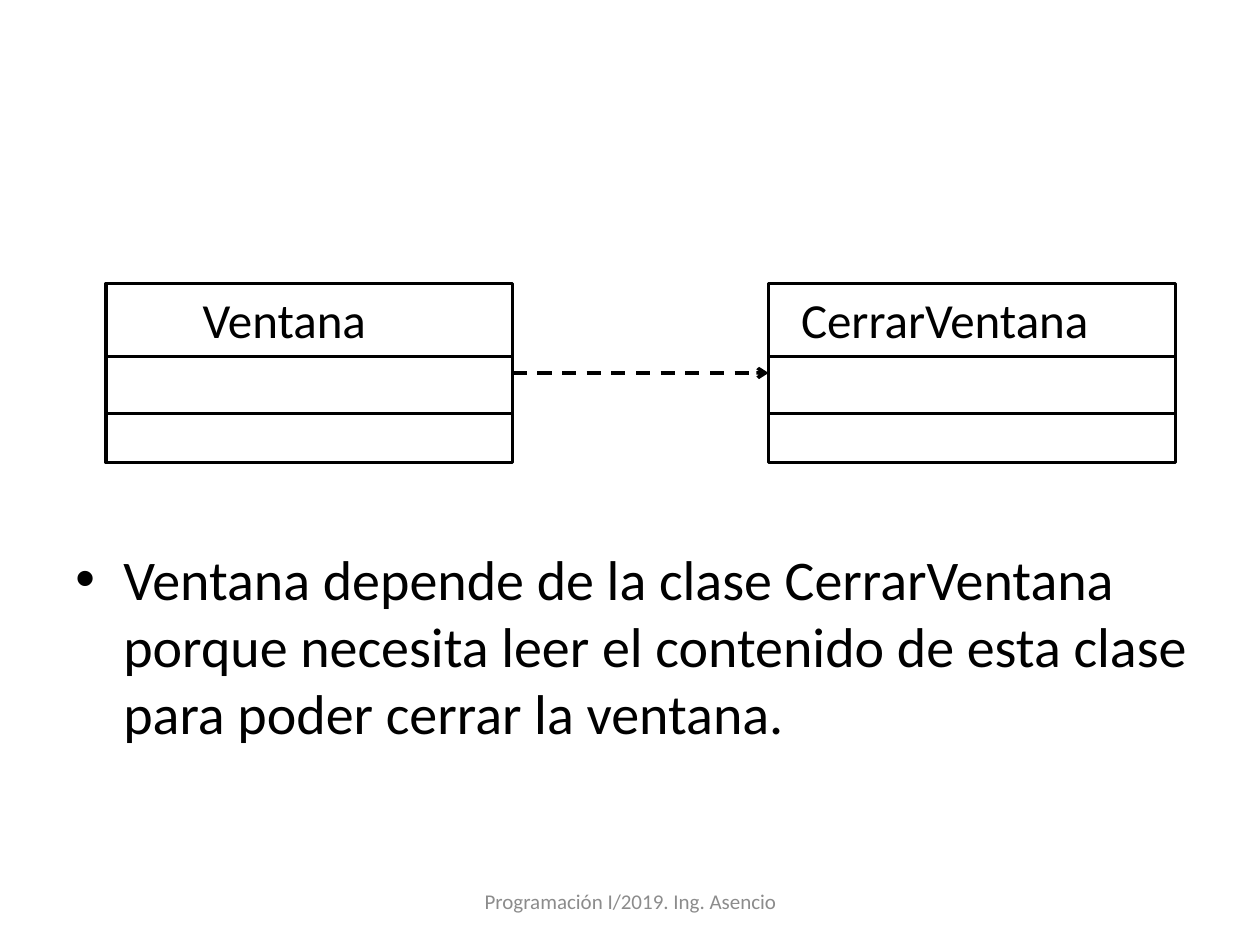
from dataclasses import dataclass

from lxml.etree import SubElement
from pptx import Presentation
from pptx.dml.color import RGBColor
from pptx.enum.dml import MSO_LINE
from pptx.enum.shapes import MSO_CONNECTOR, MSO_SHAPE
from pptx.enum.text import MSO_ANCHOR, PP_ALIGN
from pptx.oxml.ns import qn
from pptx.util import Inches, Pt


@dataclass(frozen=True)
class Theme:
    font: str = "Calibri"
    ink: RGBColor = RGBColor(0, 0, 0)
    muted: RGBColor = RGBColor(0x8C, 0x8C, 0x8C)
    body: int = 32
    class_name: int = 28
    footer: int = 12
    line: int = 2


@dataclass(frozen=True)
class ClassBox:
    name: str
    left: float
    name_left: float
    name_width: float


THEME = Theme()
BOX_TOP, BOX_WIDTH, BOX_HEIGHT = 2.25, 3.23, 1.42
DIVIDERS = (2.83, 3.28)
CLASSES = (
    ClassBox("Ventana", 0.84, 1.51, 1.89),
    ClassBox("CerrarVentana", 6.1, 6.26, 3.07),
)


def add_text(s, text: str, left: float, top: float, width: float, height: float,
             size: int, color: RGBColor = THEME.ink):
    sp = s.shapes.add_textbox(Inches(left), Inches(top), Inches(width), Inches(height))
    tf = sp.text_frame
    tf.word_wrap = True
    tf.text = text
    font = tf.paragraphs[0].runs[0].font
    font.name, font.size = THEME.font, Pt(size)
    font.color.rgb = color
    return tf


def add_line(s, x1: float, y1: float, x2: float, y2: float):
    cx = s.shapes.add_connector(MSO_CONNECTOR.STRAIGHT, Inches(x1), Inches(y1),
                                Inches(x2), Inches(y2))
    cx.line.color.rgb = THEME.ink
    cx.line.width = Pt(THEME.line)
    SubElement(cx._element.spPr, qn("a:effectLst"))
    return cx


def add_class(s, box: ClassBox):
    sp = s.shapes.add_shape(MSO_SHAPE.RECTANGLE, Inches(box.left), Inches(BOX_TOP),
                            Inches(BOX_WIDTH), Inches(BOX_HEIGHT))
    sp.shadow.inherit = False
    sp.fill.background()
    sp.line.color.rgb = THEME.ink
    sp.line.width = Pt(THEME.line)
    for y in DIVIDERS:
        add_line(s, box.left, y, box.left + BOX_WIDTH, y)
    add_text(s, box.name, box.name_left, BOX_TOP, box.name_width, 0.57, THEME.class_name)
    return sp


def add_dependency(s, source, target):
    y = BOX_TOP + BOX_HEIGHT / 2
    cx = add_line(s, CLASSES[0].left + BOX_WIDTH, y, CLASSES[1].left, y)
    cx.begin_connect(source, 3)
    cx.end_connect(target, 1)
    cx.line.dash_style = MSO_LINE.DASH
    SubElement(cx.line._get_or_add_ln(), qn("a:tailEnd"), type="arrow")


def add_bullet(p):
    pPr = p._p.get_or_add_pPr()
    pPr.set("marL", str(Inches(0.38)))
    pPr.set("indent", str(Inches(-0.38)))
    SubElement(pPr, qn("a:buFont"), typeface="Arial")
    SubElement(pPr, qn("a:buChar"), char="•")


def main():
    prs = Presentation()
    prs.slide_width, prs.slide_height = Inches(10), Inches(7.5)
    s = prs.slides.add_slide(prs.slide_layouts[6])

    # Class diagram
    window, closer = [add_class(s, box) for box in CLASSES]
    add_dependency(s, window, closer)

    # Explanation
    tf = add_text(s, "Ventana depende de la clase CerrarVentana porque necesita leer "
                  "el contenido de esta clase para poder cerrar la ventana.",
                  0.5, 4.27, 9.15, 2.43, THEME.body)
    add_bullet(tf.paragraphs[0])

    # Footer
    tf = add_text(s, "Programación I/2019. Ing. Asencio", 3.42, 6.95, 3.17, 0.4,
                  THEME.footer, THEME.muted)
    tf.vertical_anchor = MSO_ANCHOR.MIDDLE
    tf.paragraphs[0].alignment = PP_ALIGN.CENTER

    prs.save("out.pptx")


if __name__ == "__main__":
    main()
